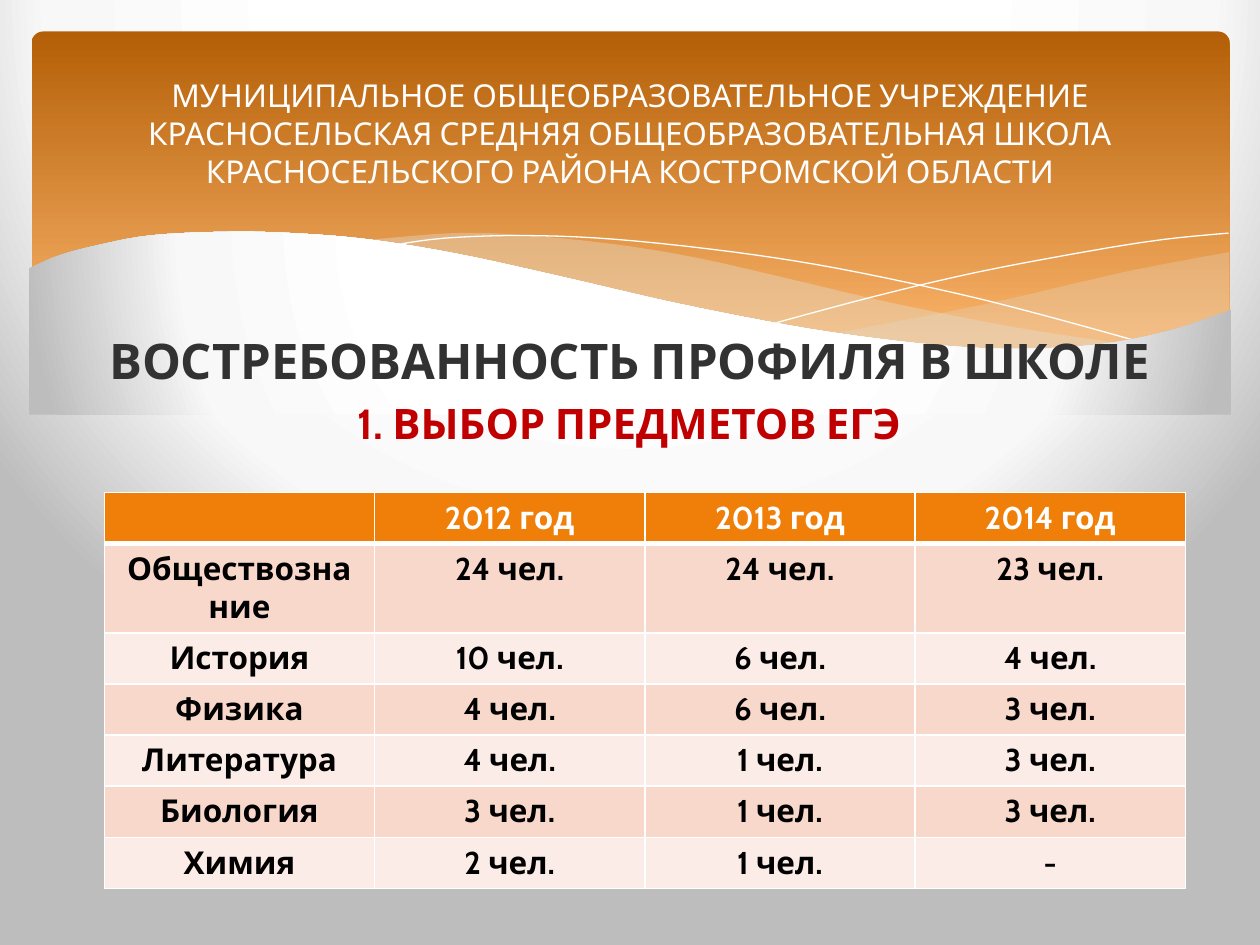
import dataclasses

import lxml.etree
import pptx
import pptx.dml.color
import pptx.enum.shapes
import pptx.enum.text
import pptx.oxml.ns
import pptx.util

Pt = pptx.util.Pt
qn = pptx.oxml.ns.qn


@dataclasses.dataclass(frozen=True)
class Theme:
    font: str = "Cabin"
    white: str = "FFFFFF"
    heading: str = "323232"
    accent: str = "C00000"
    black: str = "000000"
    ribbon: str = "E3DED1"
    header: str = "F07F09"
    bands: tuple = ("F9D8CC", "FCECE7")
    banner: tuple = ((0, "B45F07"), (90, "F9B268"))
    backdrop: tuple = ((40, "FFFFFF"), (74, "F8F8F8"), (100, "BDBDBD"))
    small: int = 18
    medium: int = 24
    large: int = 28


T = Theme()

# Curve knots, in points
RIGHT_RIBBON = (
    [(702.5, 144), (652.3, 153.4), (620, 160.6), (561, 174.2), (476, 190.8)],
    [(476, 190.8), (527, 197.3), (578, 200.2), (621.4, 198), (663, 190.8), (702.5, 177.8)],
)
LONG_RIBBON = (
    [(643, 196.6), (581, 187.2), (508.3, 172.8), (452.9, 159.8), (399.6, 147.6),
     (352, 139.7), (302.4, 134.6), (260, 133.2), (206, 137.5)],
    [(206, 137.5), (260.6, 146.2), (323.3, 159.8), (381.6, 172.8), (445, 185.8),
     (500.4, 194.4), (548, 199.4), (596, 200.2), (643, 196.6)],
)
FALLING_LINE = [(222.5, 140.4), (254.2, 136.1), (299.5, 134.6), (352, 136.8), (419, 144),
                (478.8, 153.4), (547.2, 167.8), (598.3, 180.7), (653, 195.8)]
RISING_LINE = [(441.4, 185), (500.4, 169.2), (558.7, 155.5), (623.5, 143.3),
               (665.3, 136.8), (702, 133.2)]
WAVE = [(703.4, 177.1), (669.6, 188.6), (630, 196.6), (582.5, 199.4), (535.7, 197.3),
        (481, 190.8), (434.2, 182.9), (380.9, 172.1), (321.8, 158.4), (262.8, 145.4),
        (210.2, 136.8), (165.6, 133.2), (127.4, 132.5), (85.7, 134.6), (54.7, 140.4),
        (33.1, 146.2), (16.6, 153.4)]
WAVE_BASE = [(16.6, 236.9), (703.4, 236.9)]

TITLE = ("МУНИЦИПАЛЬНОЕ ОБЩЕОБРАЗОВАТЕЛЬНОЕ УЧРЕЖДЕНИЕ\n"
         "КРАСНОСЕЛЬСКАЯ СРЕДНЯЯ ОБЩЕОБРАЗОВАТЕЛЬНАЯ ШКОЛА\n"
         "КРАСНОСЕЛЬСКОГО РАЙОНА КОСТРОМСКОЙ ОБЛАСТИ")
ROWS = [
    ("", "2012 год", "2013 год", "2014 год"),
    ("Обществознание", "24 чел.", "24 чел.", "23 чел."),
    ("История", "10 чел.", "6 чел.", "4 чел."),
    ("Физика", "4 чел.", "6 чел.", "3 чел."),
    ("Литература", "4 чел.", "1 чел.", "3 чел."),
    ("Биология", "3 чел.", "1 чел.", "3 чел."),
    ("Химия", "2 чел.", "1 чел.", "-"),
]


def rgb(color):
    return pptx.dml.color.RGBColor.from_string(color)


def sub(parent, tag, **attrs):
    return lxml.etree.SubElement(parent, qn(tag), {k: str(v) for k, v in attrs.items()})


def paint(fill, color):
    fill.solid()
    fill.fore_color.rgb = rgb(color)


def paint_gradient(owner, fill, stops, radial):
    """Replace the owner's solid fill by a gradient."""
    paint(fill, T.white)
    solid = owner.find(".//" + qn("a:solidFill"))
    grad = lxml.etree.Element(qn("a:gradFill"), rotWithShape="1")
    gs_list = sub(grad, "a:gsLst")
    for pos, color in stops:
        sub(sub(gs_list, "a:gs", pos=pos * 1000), "a:srgbClr", val=color)
    if radial:
        centre = sub(grad, "a:path", path="circle")
        sub(centre, "a:fillToRect", l=20000, t=-40000, r=20000, b=140000)
    else:
        sub(grad, "a:lin", ang=90 * 60000, scaled=0)
    solid.getparent().replace(solid, grad)


def smooth(knots, steps=5):
    """Points of a Catmull-Rom curve through the knots."""
    ends = [knots[0], *knots, knots[-1]]
    points = [knots[0]]
    for a, b, c, d in zip(ends, ends[1:], ends[2:], ends[3:]):
        for t in (i / steps for i in range(1, steps + 1)):
            points.append(tuple(
                (2 * q + (r - p) * t + (2 * p - 5 * q + 4 * r - u) * t ** 2
                 + (3 * q - p - 3 * r + u) * t ** 3) / 2
                for p, q, r, u in zip(a, b, c, d)))
    return points


def add_outline(s, points, close=True):
    pts = [(Pt(x), Pt(y)) for x, y in points]
    fb = s.shapes.build_freeform(*pts[0])
    fb.add_line_segments(pts[1:], close=close)
    sp = fb.convert_to_shape()
    sp.shadow.inherit = False
    sp.line.fill.background()
    return sp


def add_ribbon(s, edges, alpha):
    sp = add_outline(s, smooth(edges[0]) + smooth(edges[1]))
    paint(sp.fill, T.ribbon)
    sub(sp.element.find(".//" + qn("a:srgbClr")), "a:alpha", val=alpha * 1000)


def add_hairline(s, knots):
    sp = add_outline(s, smooth(knots), close=False)
    sp.fill.background()
    paint(sp.line.fill, T.white)
    sp.line.width = Pt(0)


def add_banner(s):
    sp = s.shapes.add_shape(pptx.enum.shapes.MSO_SHAPE.ROUNDED_RECTANGLE,
                            Pt(18), Pt(18), Pt(684.7), Pt(194.4))
    sp.adjustments[0] = 0.034
    sp.shadow.inherit = False
    paint_gradient(sp.element, sp.fill, T.banner, radial=False)
    sp.line.fill.background()


def add_wave(s):
    sp = add_outline(s, smooth(WAVE) + WAVE_BASE)
    paint_gradient(sp.element, sp.fill, T.backdrop, radial=True)


def style(p, size, color, bold):
    p.alignment = pptx.enum.text.PP_ALIGN.CENTER
    p.font.name, p.font.size, p.font.bold = T.font, Pt(size), bold
    p.font.color.rgb = rgb(color)


def place(sp, left, top, width, height, anchor):
    """Position a placeholder and bring it in front of the decoration."""
    sp.left, sp.top, sp.width, sp.height = Pt(left), Pt(top), Pt(width), Pt(height)
    sp.element.getparent().append(sp.element)
    tf = sp.text_frame
    tf.word_wrap = True
    tf.auto_size = pptx.enum.text.MSO_AUTO_SIZE.NONE
    tf.vertical_anchor = anchor
    return tf


def fill_body(sp):
    tf = place(sp, 25.2, 185, 668.9, 317.5, pptx.enum.text.MSO_ANCHOR.TOP)
    lines = [("ВОСТРЕБОВАННОСТЬ ПРОФИЛЯ В ШКОЛЕ", T.large, T.heading),
             ("1. ВЫБОР ПРЕДМЕТОВ ЕГЭ", T.medium, T.accent)]
    for i, (text, size, color) in enumerate(lines):
        p = tf.add_paragraph() if i else tf.paragraphs[0]
        p.text = text
        style(p, size, color, True)
        p.space_before = Pt(size * 0.2)
        ppr = p._p.get_or_add_pPr()
        ppr.set("marL", "0")
        ppr.set("indent", "0")
        ppr.insert_element_before(ppr.makeelement(qn("a:buNone")), "a:tabLst", "a:defRPr")


def fill_title(sp):
    tf = place(sp, 36, 26.6, 648, 98.6, pptx.enum.text.MSO_ANCHOR.MIDDLE)
    tf.paragraphs[0].text = TITLE
    style(tf.paragraphs[0], T.small, T.white, False)


def add_borders(cell, top, bottom):
    for side, width in (("L", 1), ("R", 1), ("T", top), ("B", bottom)):
        ln = sub(cell._tc.get_or_add_tcPr(), "a:ln" + side, w=Pt(width))
        sub(sub(ln, "a:solidFill"), "a:srgbClr", val=T.white)


def add_exam_table(s):
    n_rows, n_cols = len(ROWS), len(ROWS[0])
    table = s.shapes.add_table(n_rows, n_cols, Pt(59.6), Pt(281.3),
                               Pt(617.8), Pt(29.2 * n_rows)).table
    for r, row in enumerate(ROWS):
        for c, text in enumerate(row):
            cell = table.cell(r, c)
            p = cell.text_frame.paragraphs[0]
            p.text = text
            style(p, T.small, T.black if r else T.white, True)
            add_borders(cell, top=3 if r == 1 else 1, bottom=1 if r else 3)
            paint(cell.fill, T.bands[(r - 1) % 2] if r else T.header)


def main():
    prs = pptx.Presentation()
    prs.slide_width, prs.slide_height = Pt(720), Pt(540)
    s = prs.slides.add_slide(prs.slide_layouts[1])

    # Backdrop and banner with its waves
    paint_gradient(s.element, s.background.fill, T.backdrop, radial=True)
    add_banner(s)
    add_ribbon(s, RIGHT_RIBBON, alpha=29)
    add_ribbon(s, LONG_RIBBON, alpha=40)
    add_hairline(s, FALLING_LINE)
    add_hairline(s, RISING_LINE)
    add_wave(s)

    # Text and table
    fill_body(s.placeholders[1])
    fill_title(s.shapes.title)
    add_exam_table(s)
    prs.save("out.pptx")


if __name__ == "__main__":
    main()
